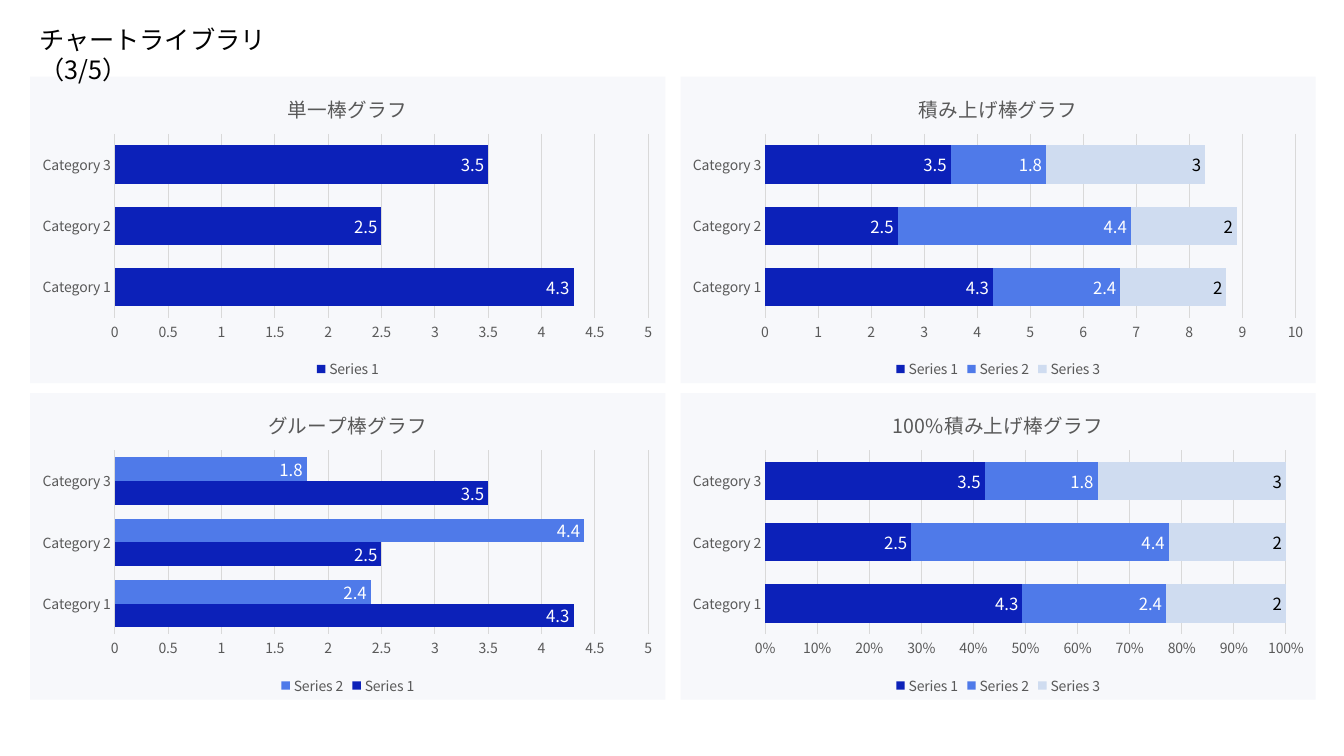
from dataclasses import dataclass

from lxml import etree
from pptx import Presentation
from pptx.chart.data import CategoryChartData
from pptx.dml.color import RGBColor
from pptx.enum.chart import XL_CHART_TYPE, XL_LABEL_POSITION, XL_LEGEND_POSITION, XL_TICK_MARK
from pptx.oxml import parse_xml
from pptx.oxml.ns import nsdecls, qn
from pptx.util import Inches, Pt

CLUSTERED = XL_CHART_TYPE.BAR_CLUSTERED
STACKED = XL_CHART_TYPE.BAR_STACKED
STACKED_100 = XL_CHART_TYPE.BAR_STACKED_100
INSIDE_END = XL_LABEL_POSITION.INSIDE_END
LEGEND_BOTTOM = XL_LEGEND_POSITION.BOTTOM
NO_TICK = XL_TICK_MARK.NONE


@dataclass(frozen=True)
class Theme:
    font: str = "Noto Sans CJK JP"
    black: str = "000000"
    grey: str = "595959"
    rule: str = "D9D9D9"
    panel: str = "F7F8FB"
    series: tuple = ("0C21B9", "4F7AE9", "CFDCF0")
    labels: tuple = ("FFFFFF", "FFFFFF", "000000")
    heading_size: int = 18
    chart_title_size: int = 14
    label_size: int = 12
    axis_size: int = 10


THEME = Theme()

# Two by two grid of chart panels, in inches
SLIDE_SIZE = (13.33, 7.5)
GRID_LEFT, GRID_TOP = 0.3, 0.76
PANEL_WIDTH, PANEL_HEIGHT = 6.3, 3.04
COLUMN_STEP, ROW_STEP = 6.45, 3.14

CATEGORIES = ("Category 1", "Category 2", "Category 3")
SERIES = (
    ("Series 1", (4.3, 2.5, 3.5)),
    ("Series 2", (2.4, 4.4, 1.8)),
    ("Series 3", (2, 2, 3)),
)

# Title, column, row, type, series count, axis format, plot width share
CHARTS = (
    ("単一棒グラフ", 0, 0, CLUSTERED, 1, "General", 0.84),
    ("積み上げ棒グラフ", 1, 0, STACKED, 3, "General", 0.835),
    ("グループ棒グラフ", 0, 1, CLUSTERED, 2, "General", 0.84),
    ("100%積み上げ棒グラフ", 1, 1, STACKED_100, 3, "0%", 0.82),
)


def style_font(font, size, color):
    font.name = THEME.font
    font.size = Pt(size)
    font.bold = False
    font.color.rgb = RGBColor.from_string(color)


def use_font_for_japanese(element):
    for latin in list(element.iter(qn("a:latin"))):
        east_asian = etree.Element(qn("a:ea"), typeface=THEME.font)
        latin.addnext(east_asian)


def style_line(line):
    line.color.rgb = RGBColor.from_string(THEME.rule)
    line.width = Pt(0.75)


def fill_panel(chart):
    fill = parse_xml(
        f'<c:spPr {nsdecls("c", "a")}><a:solidFill><a:srgbClr val="{THEME.panel}"/>'
        "</a:solidFill><a:ln><a:noFill/></a:ln></c:spPr>"
    )
    chart.element.find(qn("c:txPr")).addprevious(fill)


def place_plot(chart, width):
    plot_area = chart.element.find(".//" + qn("c:plotArea"))
    for layout in plot_area.findall(qn("c:layout")):
        plot_area.remove(layout)
    layout = etree.Element(qn("c:layout"))
    manual = etree.SubElement(layout, qn("c:manualLayout"))
    settings = (
        ("layoutTarget", "inner"), ("xMode", "edge"), ("yMode", "edge"),
        ("x", 0.133), ("y", 0.187), ("w", width), ("h", 0.6),
    )
    for name, value in settings:
        etree.SubElement(manual, qn(f"c:{name}"), val=str(value))
    plot_area.insert(0, layout)


def style_axes(chart, number_format):
    for axis in (chart.category_axis, chart.value_axis):
        axis.major_tick_mark = axis.minor_tick_mark = NO_TICK
        style_font(axis.tick_labels.font, THEME.axis_size, THEME.grey)
    style_line(chart.category_axis.format.line)
    value_axis = chart.value_axis
    value_axis.format.line.fill.background()
    value_axis.has_major_gridlines = True
    style_line(value_axis.major_gridlines.format.line)
    value_axis.tick_labels.number_format = number_format
    value_axis.tick_labels.number_format_is_linked = False


def style_series(plot):
    for series, color, label_color in zip(plot.series, THEME.series, THEME.labels):
        series.format.fill.solid()
        series.format.fill.fore_color.rgb = RGBColor.from_string(color)
        series.invert_if_negative = False
        labels = series.data_labels
        labels.show_value = True
        labels.position = INSIDE_END
        style_font(labels.font, THEME.label_size, label_color)


def add_bar_chart(slide, title, column, row, chart_type, count, number_format, plot_width):
    data = CategoryChartData()
    data.categories = CATEGORIES
    for name, values in SERIES[:count]:
        data.add_series(name, values)
    chart = slide.shapes.add_chart(
        chart_type,
        Inches(GRID_LEFT + column * COLUMN_STEP), Inches(GRID_TOP + row * ROW_STEP),
        Inches(PANEL_WIDTH), Inches(PANEL_HEIGHT), data,
    ).chart
    style_font(chart.font, THEME.axis_size, THEME.black)
    fill_panel(chart)

    # Title and legend
    chart.has_title = True
    chart.chart_title.include_in_layout = False
    paragraph = chart.chart_title.text_frame.paragraphs[0]
    paragraph.text = title
    style_font(paragraph.font, THEME.chart_title_size, THEME.grey)
    chart.has_legend = True
    chart.legend.position = LEGEND_BOTTOM
    chart.legend.include_in_layout = False
    style_font(chart.legend.font, THEME.axis_size, THEME.grey)

    # Bars
    plot = chart.plots[0]
    plot.vary_by_categories = False
    plot.gap_width = 60
    plot.overlap = 0 if chart_type == CLUSTERED else 100
    style_series(plot)
    style_axes(chart, number_format)
    place_plot(chart, plot_width)
    use_font_for_japanese(chart.element)


def add_heading(slide, text):
    box = slide.shapes.add_textbox(Inches(0.29), Inches(0.19), Inches(3.38), Inches(0.4))
    frame = box.text_frame
    frame.word_wrap = True
    frame.margin_right = Inches(0.8)
    paragraph = frame.paragraphs[0]
    paragraph.text = text
    style_font(paragraph.font, THEME.heading_size, THEME.black)
    use_font_for_japanese(box.element)


def main():
    presentation = Presentation()
    presentation.slide_width, presentation.slide_height = map(Inches, SLIDE_SIZE)
    slide = presentation.slides.add_slide(presentation.slide_layouts[6])
    for chart in CHARTS:
        add_bar_chart(slide, *chart)
    add_heading(slide, "チャートライブラリ（3/5）")
    presentation.save("out.pptx")


if __name__ == "__main__":
    main()
